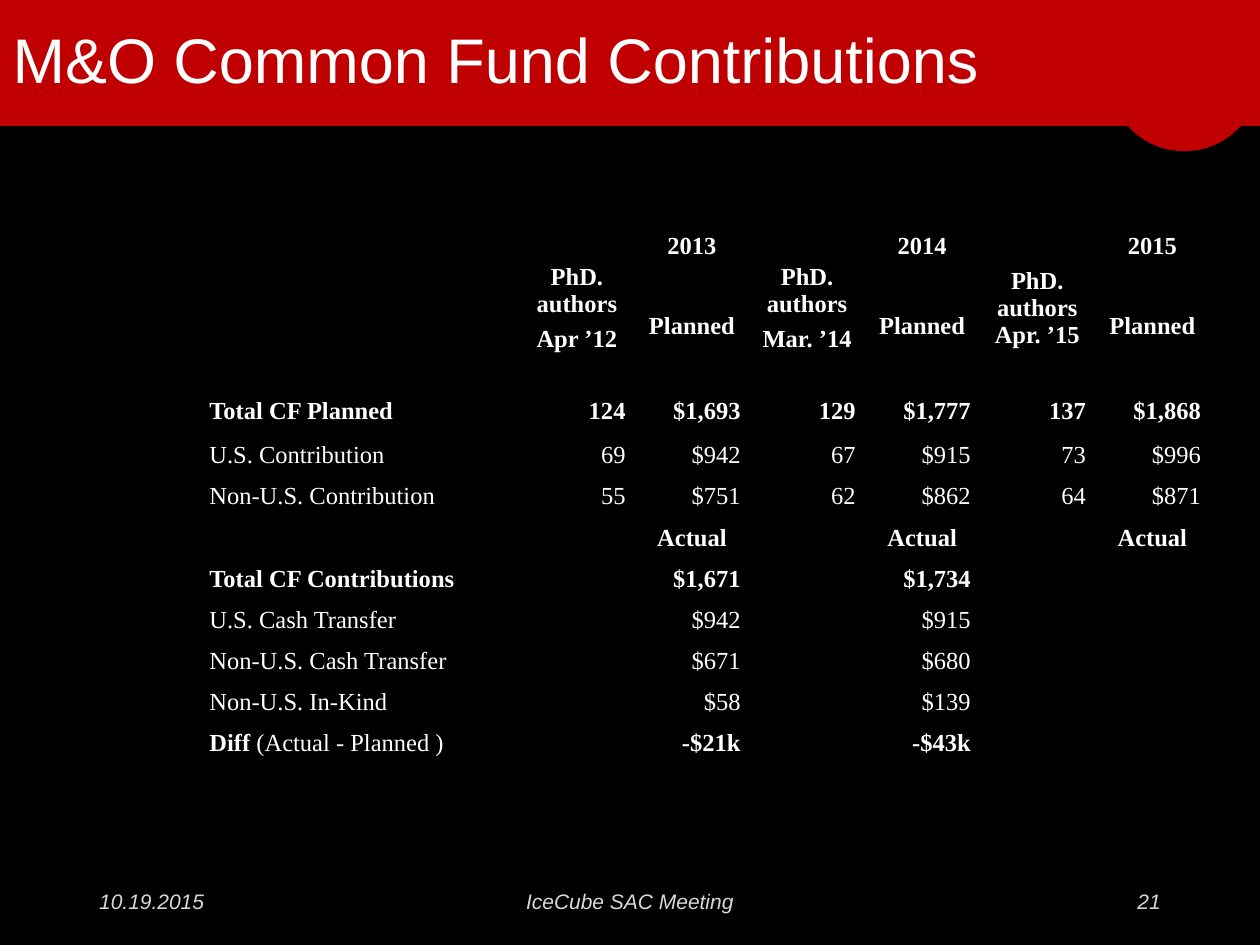
from dataclasses import dataclass

from lxml.etree import SubElement
from pptx import Presentation
from pptx.dml.color import RGBColor
from pptx.enum.shapes import MSO_SHAPE
from pptx.enum.text import MSO_ANCHOR, MSO_AUTO_SIZE, PP_ALIGN
from pptx.oxml.ns import qn
from pptx.util import Cm, Pt

BLACK = RGBColor(0x00, 0x00, 0x00)
WHITE = RGBColor(0xFF, 0xFF, 0xFF)
RED = RGBColor(0xC0, 0x00, 0x00)
GREY = RGBColor(0xD9, 0xD9, 0xD9)
TITLE_ONLY = 5

HEADERS = ["PhD. authors\nApr ’12", "2013", "PhD. authors\nMar. ’14", "2014",
           "PhD. authors Apr. ’15", "2015"]
ROWS = [
    ["", *HEADERS],
    ["", "", "Planned", "", "Planned", "", "Planned"],
    [""] * 7,
    ["Total CF Planned", "124", "$1,693", "129", "$1,777", "137", "$1,868"],
    ["U.S. Contribution", "69", "$942", "67", "$915", "73", "$996"],
    ["Non-U.S. Contribution", "55", "$751", "62", "$862", "64", "$871"],
    ["", "", "Actual", "", "Actual", "", "Actual"],
    ["Total CF Contributions", "", "$1,671", "", "$1,734", "", ""],
    ["U.S. Cash Transfer", "", "$942", "", "$915", "", ""],
    ["Non-U.S. Cash Transfer", "", "$671", "", "$680", "", ""],
    ["Non-U.S. In-Kind", "", "$58", "", "$139", "", ""],
    ["Diff ", "", "-$21k", "", "-$43k", "", ""],
]
DIFF_NOTE = "(Actual - Planned )"
BOLD_ROWS = {0, 1, 3, 6, 7, 11}
CENTRED_ROWS = {0, 1, 6}
ROW_HEIGHTS = [0.71, 0.56, 0.08, 0.94] + [0.83] * 8
COLUMN_WIDTHS = [6.43] + [2.32] * 6


@dataclass
class Box:
    """A region of the slide in centimetres."""
    left: float
    top: float
    width: float
    height: float

    def place(self):
        """Return the position and size as lengths."""
        return Cm(self.left), Cm(self.top), Cm(self.width), Cm(self.height)


def style_font(font, name, size, color, bold=False, italic=False):
    """Set the look of a font."""
    font.name, font.size = name, Pt(size)
    font.bold, font.italic = bold, italic
    font.color.rgb = color


def add_red_shape(page, kind, box):
    """Add a flat red shape."""
    shape = page.shapes.add_shape(kind, *box.place())
    shape.shadow.inherit = False
    shape.fill.solid()
    shape.fill.fore_color.rgb = RED
    shape.line.fill.background()


def add_title_band(page, box):
    """Fill the band with the title and the red corner at its right."""
    corner, circle = 3.81, 3.05
    right = box.left + box.width
    add_red_shape(page, MSO_SHAPE.RECTANGLE,
                  Box(right - corner, box.top, corner, box.height))
    add_red_shape(page, MSO_SHAPE.OVAL,
                  Box(right - circle, box.top, circle, circle))
    title = page.shapes.title
    title.left, title.top, title.width, title.height = Box(
        box.left, box.top, box.width - corner, box.height).place()
    title.fill.solid()
    title.fill.fore_color.rgb = RED
    frame = title.text_frame
    frame.text = "M&O Common Fund Contributions"
    frame.auto_size = MSO_AUTO_SIZE.NONE
    frame.vertical_anchor = MSO_ANCHOR.MIDDLE
    para = frame.paragraphs[0]
    para.alignment, para.line_spacing = PP_ALIGN.LEFT, 0.9
    style_font(para.runs[0].font, "Arial", 36, WHITE)


def add_borders(cell):
    """Draw thin black lines on all sides of a cell."""
    properties = cell._tc.get_or_add_tcPr()
    for side in ("a:lnL", "a:lnR", "a:lnT", "a:lnB"):
        line = SubElement(properties, qn(side), w=str(Pt(1)))
        fill = SubElement(line, qn("a:solidFill"))
        SubElement(fill, qn("a:srgbClr"), val=str(BLACK))


def fill_cell(cell, text, alignment, bold):
    """Write and format one table cell."""
    add_borders(cell)
    cell.fill.background()
    cell.vertical_anchor = MSO_ANCHOR.MIDDLE
    cell.margin_left = cell.margin_right = Cm(0.18)
    cell.margin_top = cell.margin_bottom = 0
    cell.text_frame.text = text
    for para in cell.text_frame.paragraphs:
        para.alignment, para.space_after = alignment, Pt(4)
        for span in para.runs:
            style_font(span.font, "Times New Roman", 14, WHITE, bold)
        if not para.runs:
            SubElement(para._p, qn("a:endParaRPr"), sz="1400")


def add_contribution_table(page, box):
    """Add the table of planned and actual contributions."""
    table = page.shapes.add_table(len(ROWS), len(COLUMN_WIDTHS), *box.place()).table
    table.first_row = table.horz_banding = False
    for column, width in zip(table.columns, COLUMN_WIDTHS):
        column.width = Cm(width)
    for row, height in zip(table.rows, ROW_HEIGHTS):
        row.height = Cm(height)
    for r, values in enumerate(ROWS):
        for c, text in enumerate(values):
            if r in CENTRED_ROWS:
                alignment = PP_ALIGN.CENTER
            else:
                alignment = PP_ALIGN.RIGHT if c else PP_ALIGN.LEFT
            fill_cell(table.cell(r, c), text, alignment, r in BOLD_ROWS)
    note = table.cell(len(ROWS) - 1, 0).text_frame.paragraphs[0].add_run()
    note.text = DIFF_NOTE
    style_font(note.font, "Times New Roman", 14, WHITE)
    table.cell(0, 0).merge(table.cell(1, 0))
    for c in (1, 3, 5):
        table.cell(0, c).merge(table.cell(2, c))
        table.cell(1, c + 1).merge(table.cell(2, c + 1))


def add_footer(page, box):
    """Add the date, meeting name and page number along the bottom."""
    side, middle = 5.72, 8.58
    parts = [
        ("10.19.2015", 0, side, PP_ALIGN.LEFT),
        ("IceCube SAC Meeting", (box.width - middle) / 2, middle, PP_ALIGN.CENTER),
        ("21", box.width - side, side, PP_ALIGN.RIGHT),
    ]
    for text, offset, width, alignment in parts:
        area = Box(box.left + offset, box.top, width, box.height)
        frame = page.shapes.add_textbox(*area.place()).text_frame
        frame.word_wrap = True
        frame.vertical_anchor = MSO_ANCHOR.MIDDLE
        frame.text = text
        para = frame.paragraphs[0]
        para.alignment = alignment
        style_font(para.runs[0].font, "Arial", 12, GREY, italic=True)


def main():
    """Build the slide and save the deck."""
    deck = Presentation()
    deck.slide_width, deck.slide_height = Cm(25.4), Cm(19.05)
    page = deck.slides.add_slide(deck.slide_layouts[TITLE_ONLY])
    page.background.fill.solid()
    page.background.fill.fore_color.rgb = BLACK
    add_title_band(page, Box(0, 0, 25.4, 2.54))
    add_footer(page, Box(1.75, 17.65, 21.9, 1.02))
    add_contribution_table(
        page, Box(4.04, 4.6, sum(COLUMN_WIDTHS), sum(ROW_HEIGHTS)))
    deck.save("out.pptx")


if __name__ == "__main__":
    main()
